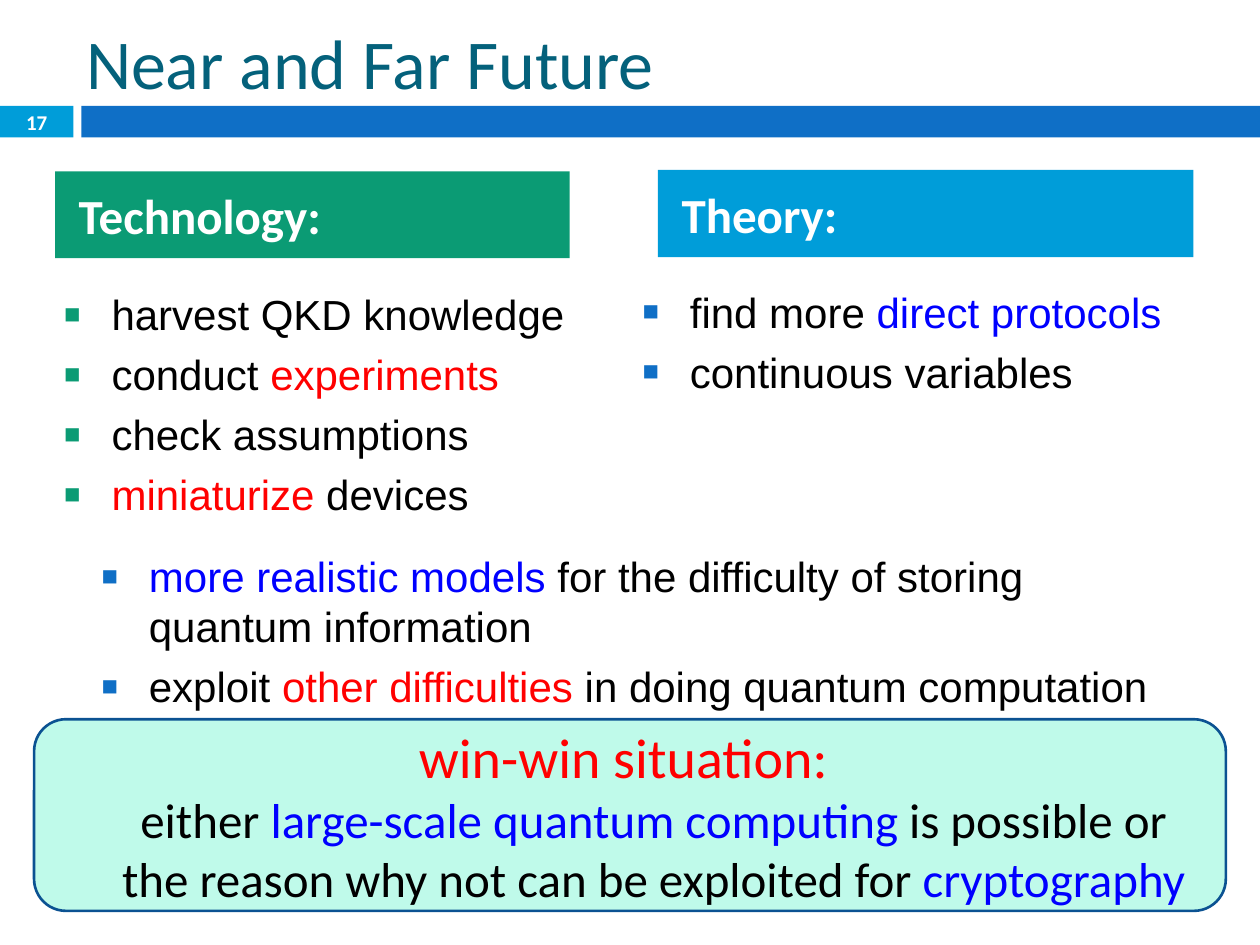
"""Build the "Near and Far Future" slide."""
from dataclasses import dataclass

from lxml import etree
from pptx import Presentation
from pptx.dml.color import RGBColor
from pptx.enum import shapes, text
from pptx.oxml import ns
from pptx.util import Pt


@dataclass(frozen=True)
class Theme:
    """Colours, fonts and type sizes."""
    black: str = "000000"
    white: str = "FFFFFF"
    red: str = "FF0000"
    blue: str = "0000FF"
    teal: str = "04617B"
    bar: str = "0F6FC6"
    sky: str = "009DD9"
    green: str = "0B9B74"
    mint: str = "BFFAEA"
    edge: str = "0B5292"
    head_font: str = "Calibri"
    list_font: str = "Arial"
    title: float = 40
    lead: float = 32
    heading: float = 28
    body: float = 24
    number: float = 12
    indent: float = 27


class Deck:
    """Hold the theme and the current slide, and draw its elements."""

    def __init__(self, prs, theme):
        self.theme = theme
        self.s = prs.slides.add_slide(prs.slide_layouts[4])

    def place(self, sp, box):
        """Move a shape to (left, top, width, height) in points."""
        sp.left, sp.top, sp.width, sp.height = map(Pt, box)
        return sp

    def fill(self, sp, color):
        """Give a shape a solid fill."""
        sp.fill.solid()
        sp.fill.fore_color.rgb = RGBColor.from_string(color)

    def frame(self, sp, anchor):
        """Return a wrapping text frame of fixed size."""
        tf = sp.text_frame
        tf.word_wrap = True
        tf.auto_size = text.MSO_AUTO_SIZE.NONE
        tf.vertical_anchor = anchor
        return tf

    def style(self, r, size, color, font, bold=False):
        """Format one run."""
        r.font.size, r.font.name, r.font.bold = Pt(size), font, bold
        r.font.color.rgb = RGBColor.from_string(color)

    def run(self, p, words, size, color, font):
        """Append a formatted run to a paragraph."""
        r = p.add_run()
        r.text = words
        self.style(r, size, color, font)

    def line(self, sp, box, words, size, color, bold=False, align=text.PP_ALIGN.LEFT):
        """Set a single line of text in a placed shape."""
        tf = self.frame(self.place(sp, box), text.MSO_ANCHOR.MIDDLE)
        tf.text = words
        p = tf.paragraphs[0]
        p.alignment = align
        self.style(p.runs[0], size, color, self.theme.head_font, bold)
        return tf

    def title(self, box, words):
        """Fill the title placeholder."""
        self.line(self.s.shapes.title, box, words, self.theme.title, self.theme.teal)

    def heading(self, idx, box, words, color):
        """Fill a heading placeholder as a coloured band."""
        sp = self.s.placeholders[idx]
        self.fill(sp, color)
        tf = self.line(sp, box, words, self.theme.heading, self.theme.white, True)
        tf.margin_left = Pt(13.5)
        tf.paragraphs[0].space_before = Pt(7)

    def textbox(self):
        """Add an empty text box."""
        return self.s.shapes.add_textbox(0, 0, 0, 0)

    def hang(self, p):
        """Give a paragraph a hanging indent and return its properties."""
        pPr = p._p.get_or_add_pPr()
        pPr.set("marL", str(Pt(self.theme.indent)))
        pPr.set("indent", str(-Pt(self.theme.indent)))
        return pPr

    def bullets(self, sp, box, items, color):
        """Fill a placeholder or text box with square-bulleted items."""
        tf = self.frame(self.place(sp, box), text.MSO_ANCHOR.TOP)
        for i, item in enumerate(items):
            p = tf.add_paragraph() if i else tf.paragraphs[0]
            p.space_before = Pt(5.5)
            pPr = self.hang(p)
            clr = etree.SubElement(pPr, ns.qn("a:buClr"))
            etree.SubElement(clr, ns.qn("a:srgbClr"), val=color)
            etree.SubElement(pPr, ns.qn("a:buSzPct"), val="65000")
            etree.SubElement(pPr, ns.qn("a:buFont"), typeface=self.theme.list_font)
            etree.SubElement(pPr, ns.qn("a:buChar"), char="■")
            for words, ink in item:
                self.run(p, words, self.theme.body, ink, self.theme.list_font)

    def shape(self, kind, box, color, edge=None):
        """Add a filled preset shape."""
        sp = self.s.shapes.add_shape(kind, *map(Pt, box))
        sp.shadow.inherit = False
        self.fill(sp, color)
        if edge:
            sp.line.color.rgb = RGBColor.from_string(edge)
            sp.line.width = Pt(1.5)
        else:
            sp.line.fill.background()
        return sp

    def banner(self, box, lines):
        """Add the rounded conclusion box with centred lines."""
        t = self.theme
        sp = self.shape(shapes.MSO_SHAPE.ROUNDED_RECTANGLE, box, t.mint, t.edge)
        p = self.frame(sp, text.MSO_ANCHOR.MIDDLE).paragraphs[0]
        p.alignment = text.PP_ALIGN.CENTER
        self.hang(p)
        for i, (size, parts) in enumerate(lines):
            if i:
                p.add_line_break()
            for words, ink in parts:
                self.run(p, words, size, ink, t.head_font)


def main():
    """Draw the slide and save it."""
    t = Theme()
    prs = Presentation()
    prs.slide_width, prs.slide_height = Pt(720), Pt(540)
    d = Deck(prs, t)
    rect = shapes.MSO_SHAPE.RECTANGLE

    d.shape(rect, (0, 60.5, 42, 18), t.sky)
    d.shape(rect, (46.5, 60.5, 673.5, 18), t.bar)
    d.title((42, 1, 642, 68), "Near and Far Future")
    d.line(d.textbox(), (0, 60, 42, 19.5), "17", t.number, t.white, True,
           text.PP_ALIGN.CENTER)

    d.heading(1, (31.5, 98, 294, 49.5), "Technology:", t.green)
    d.heading(3, (376, 97, 306, 50), "Theory:", t.sky)
    d.bullets(d.s.placeholders[2], (29.5, 161.5, 340.5, 150), [
        [("harvest QKD knowledge", t.black)],
        [("conduct ", t.black), ("experiments", t.red)],
        [("check assumptions", t.black)],
        [("miniaturize", t.red), (" devices", t.black)],
    ], t.green)
    d.bullets(d.s.placeholders[4], (360, 160, 346, 145.5), [
        [("find more ", t.black), ("direct protocols", t.blue)],
        [("continuous variables", t.black)],
    ], t.bar)
    d.bullets(d.textbox(), (51, 311, 625, 99.5), [
        [("more realistic models ", t.blue),
         ("for the difficulty of storing quantum information", t.black)],
        [("exploit ", t.black), ("other difficulties ", t.red),
         ("in doing quantum computation", t.black)],
    ], t.bar)

    d.banner((19.5, 411, 681, 109.5), [
        (t.lead, [("win-win situation: ", t.red)]),
        (t.heading, [("either ", t.black), ("large-scale quantum computing ", t.blue),
                     ("is possible or", t.black)]),
        (t.heading, [("the reason why not can be exploited for ", t.black),
                     ("cryptography", t.blue)]),
    ])
    prs.save("out.pptx")


if __name__ == "__main__":
    main()
